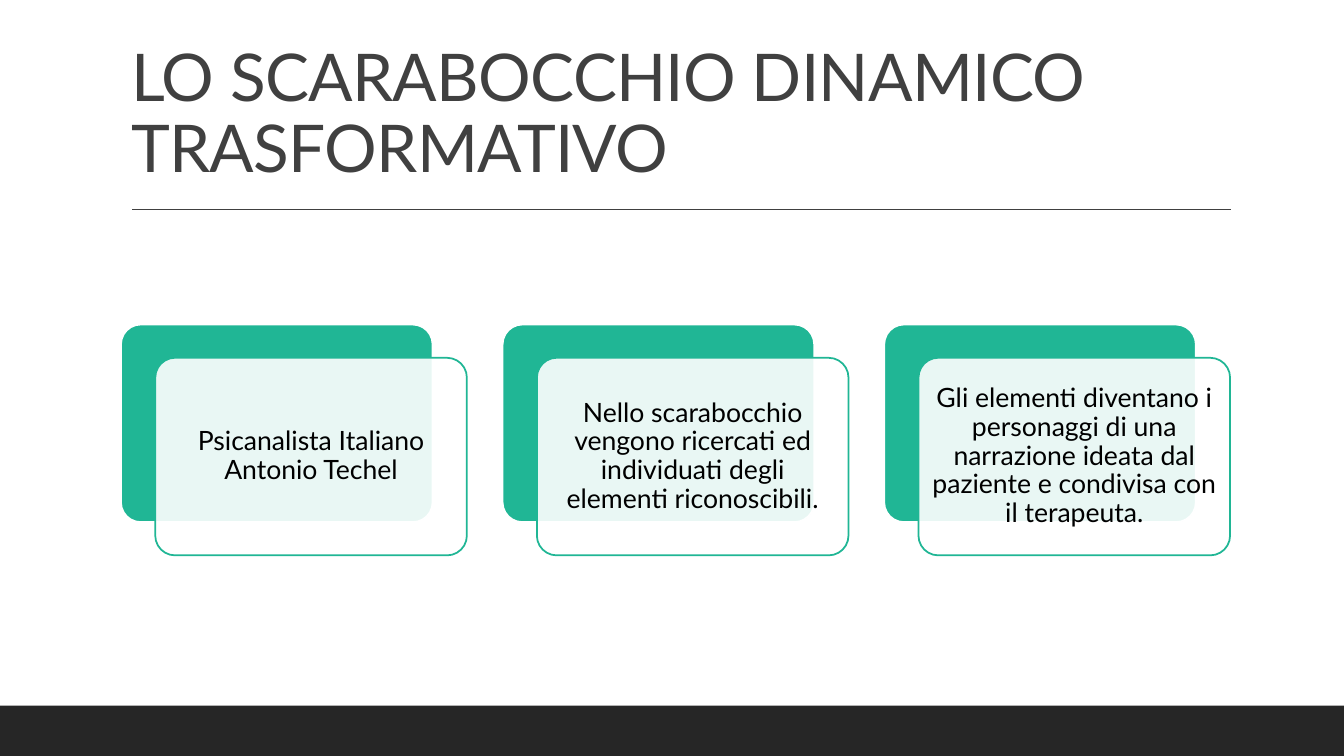
from lxml.etree import SubElement
from pptx import Presentation
from pptx.dml.color import RGBColor
from pptx.enum.shapes import MSO_CONNECTOR, MSO_SHAPE
from pptx.enum.text import MSO_ANCHOR, MSO_AUTO_SIZE, PP_ALIGN
from pptx.oxml.ns import qn
from pptx.util import Inches, Pt

COLORS = {
    "white": "FFFFFF",
    "title": "404040",
    "footer": "262626",
    "accent": "20B695",
    "text": "000000",
}
FONT = "Lato"
TITLE = "LO SCARABOCCHIO DINAMICO TRASFORMATIVO"
CARDS = [
    "Psicanalista Italiano Antonio Techel",
    "Nello scarabocchio vengono ricercati ed individuati degli elementi riconoscibili.",
    "Gli elementi diventano i personaggi di una narrazione ideata dal paziente "
    "e condivisa con il terapeuta.",
]


def color(name):
    return RGBColor.from_string(COLORS[name])


def write_text(shape, text, *, size, fill, align, anchor, inset_x, inset_y, tracking=0):
    """Fill a shape with one formatted paragraph; tracking is in points."""
    frame = shape.text_frame
    frame.word_wrap = True
    frame.auto_size = MSO_AUTO_SIZE.NONE
    frame.vertical_anchor = anchor
    frame.margin_left = frame.margin_right = Inches(inset_x)
    frame.margin_top = frame.margin_bottom = Inches(inset_y)
    paragraph = frame.paragraphs[0]
    paragraph.alignment = align
    paragraph.line_spacing = 0.9
    run = paragraph.add_run()
    run.text = text
    run.font.name = FONT
    run.font.size = Pt(size)
    run.font.color.rgb = color(fill)
    if tracking:
        run.font._element.set("spc", str(round(tracking * 100)))


def add_block(shapes, kind, left, top, width, height, *, fill, line=None, opacity=None):
    shape = shapes.add_shape(kind, Inches(left), Inches(top), Inches(width), Inches(height))
    shape.shadow.inherit = False
    shape.fill.solid()
    shape.fill.fore_color.rgb = color(fill)
    if opacity is not None:
        fill_color = shape._element.spPr.find(qn("a:solidFill"))[0]
        SubElement(fill_color, qn("a:alpha")).set("val", str(opacity * 1000))
    if line:
        shape.line.color.rgb = color(line)
        shape.line.width = Pt(1.25)
    else:
        shape.line.fill.background()
    return shape


def add_header(slide, left, top, width, height):
    """Place the title and the rule below it."""
    title = slide.shapes.title
    title.left, title.top = Inches(left), Inches(top)
    title.width, title.height = Inches(width), Inches(height)
    write_text(title, TITLE, size=47, fill="title", align=PP_ALIGN.LEFT,
               anchor=MSO_ANCHOR.BOTTOM, inset_x=0.1, inset_y=0.05, tracking=-0.5)
    rule_y = Inches(top + height + 0.18)
    rule = slide.shapes.add_connector(
        MSO_CONNECTOR.STRAIGHT, Inches(left + 0.11), rule_y, Inches(left + width + 0.01), rule_y)
    rule.line.color.rgb = color("title")
    rule.line.width = Pt(1)
    SubElement(rule._element.spPr, qn("a:effectLst"))


def add_card(shapes, text, left, top, width, height):
    """Place a solid panel with a translucent text panel offset over it."""
    offset_x, offset_y = 0.34, 0.33
    panel_width, panel_height = width - offset_x, height - offset_y
    back = add_block(shapes, MSO_SHAPE.ROUNDED_RECTANGLE, left, top,
                     panel_width, panel_height, fill="accent", line="white")
    front = add_block(shapes, MSO_SHAPE.ROUNDED_RECTANGLE, left + offset_x, top + offset_y,
                      panel_width, panel_height, fill="white", line="accent", opacity=90)
    for panel in (back, front):
        panel.adjustments[0] = 0.1
    write_text(front, text, size=19, fill="text", align=PP_ALIGN.CENTER,
               anchor=MSO_ANCHOR.MIDDLE, inset_x=0.08, inset_y=0.08)


def add_card_row(slide, left, top, width, height):
    group = slide.shapes.add_group_shape()
    card_width = 3.43
    step = (width - card_width) / (len(CARDS) - 1)
    for index, text in enumerate(CARDS):
        add_card(group.shapes, text, left + index * step, top, card_width, height)


def main():
    presentation = Presentation()
    presentation.slide_width, presentation.slide_height = Inches(13.33), Inches(7.5)
    slide = presentation.slides.add_slide(presentation.slide_layouts[5])
    slide.background.fill.solid()
    slide.background.fill.fore_color.rgb = color("white")
    add_block(slide.shapes, MSO_SHAPE.RECTANGLE, 0, 7, 13.33, 0.5, fill="footer")
    add_header(slide, 1.2, 0.31, 11, 1.59)
    add_card_row(slide, 1.2, 3.22, 11, 2.29)
    presentation.save("out.pptx")


if __name__ == "__main__":
    main()
